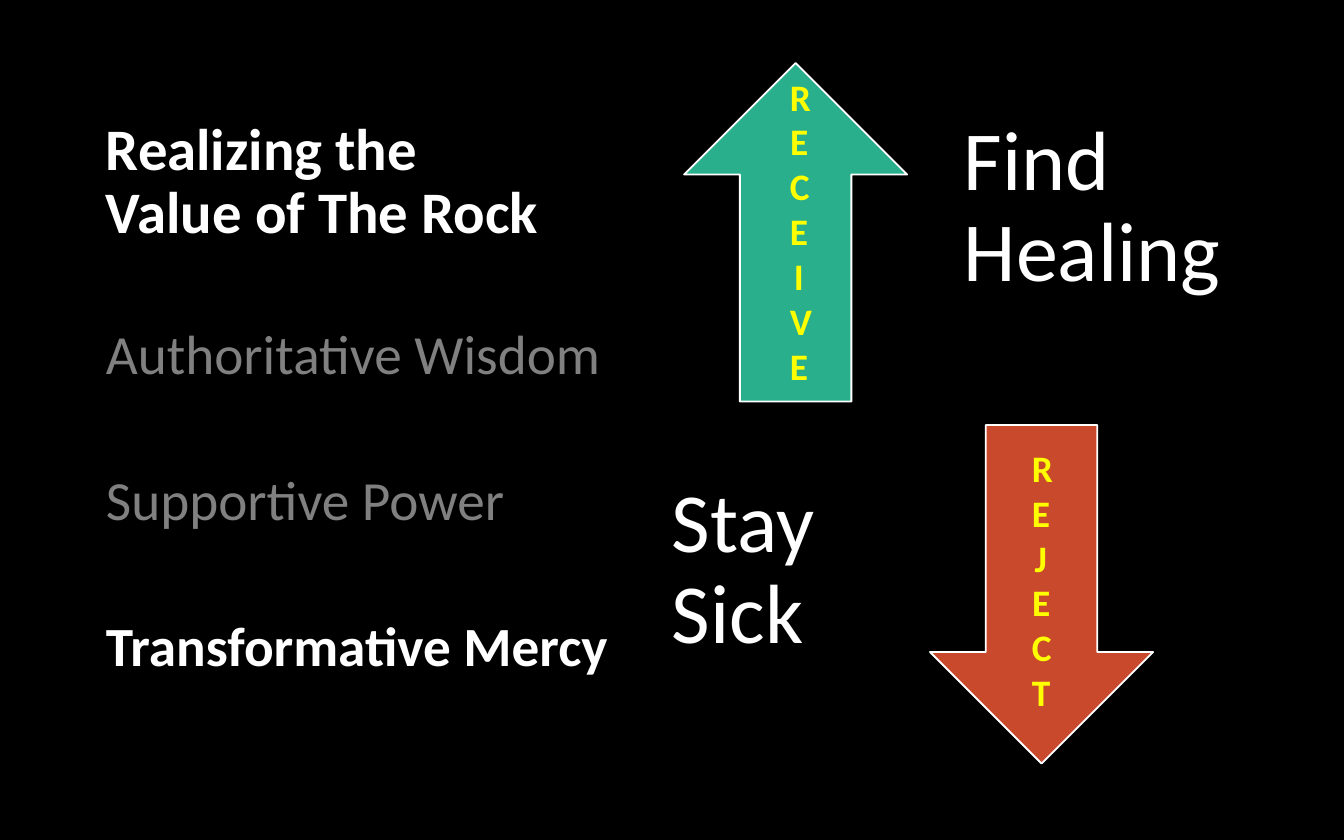
from dataclasses import dataclass

import pptx
import pptx.dml.color
import pptx.enum.shapes
import pptx.enum.text
import pptx.util

Anchor = pptx.enum.text.MSO_ANCHOR
Align = pptx.enum.text.PP_ALIGN
Kind = pptx.enum.shapes.MSO_SHAPE

WIDE, HIGH = pptx.util.Inches(10), pptx.util.Inches(6.25)
FONT = "Calibri"
HUES = {
    "back": "000000",
    "white": "FFFFFF",
    "gray": "808080",
    "green": "29AF8C",
    "red": "C9492C",
    "yellow": "FFFF00",
}


@dataclass(frozen=True)
class Box:
    left: float
    top: float
    width: float
    height: float


@dataclass(frozen=True)
class Line:
    text: str
    hue: str = "white"
    bold: bool = False


@dataclass(frozen=True)
class Block:
    box: Box
    lines: tuple[Line, ...]
    size: float
    pitch: float = 0.9
    gap: float = 0
    align: Align = Align.LEFT
    anchor: Anchor = Anchor.TOP
    pad: tuple[float, float, float, float] = (1, 0.8, 1, 0.8)


@dataclass(frozen=True)
class Arrow:
    box: Box
    kind: Kind
    hue: str


def across(share: float) -> int:
    return round(WIDE * share / 100)


def down(share: float) -> int:
    return round(HIGH * share / 100)


def place(box: Box) -> tuple[int, int, int, int]:
    return across(box.left), down(box.top), across(box.width), down(box.height)


def tint(hue: str) -> pptx.dml.color.RGBColor:
    return pptx.dml.color.RGBColor.from_string(HUES[hue])


def draw_arrow(slide, arrow: Arrow) -> None:
    shape = slide.shapes.add_shape(arrow.kind, *place(arrow.box))
    shape.shadow.inherit = False
    shape.fill.solid()
    shape.fill.fore_color.rgb = tint(arrow.hue)
    shape.line.color.rgb = tint("white")
    shape.line.width = pptx.util.Pt(1)


def draw_block(slide, block: Block) -> None:
    frame = slide.shapes.add_textbox(*place(block.box)).text_frame
    frame.word_wrap = True
    frame.vertical_anchor = block.anchor
    left, top, right, base = block.pad
    frame.margin_left, frame.margin_right = across(left), across(right)
    frame.margin_top, frame.margin_bottom = down(top), down(base)
    for rank, line in enumerate(block.lines):
        para = frame.add_paragraph() if rank else frame.paragraphs[0]
        para.alignment = block.align
        para.line_spacing = block.pitch
        para.space_before = pptx.util.Pt(block.gap if rank else 0)
        run = para.add_run()
        run.text = line.text
        run.font.name = FONT
        run.font.size = pptx.util.Pt(block.size)
        run.font.bold = line.bold
        run.font.color.rgb = tint(line.hue)


def claim(box: Box, text: str) -> Block:
    return Block(box, (Line(text),), 45, anchor=Anchor.MIDDLE, pad=(3.5, 0, 3.5, 5.6))


def stack(box: Box, *parts: str) -> Block:
    lines = tuple(Line(part, "yellow", True) for part in parts)
    return Block(box, lines, 20, pitch=1, align=Align.CENTER)


UPPER, LOWER, TALL = 7.5, 50.6, 40.3

ARROWS = (
    Arrow(Box(50.9, UPPER, 16.6, TALL), Kind.UP_ARROW, "green"),
    Arrow(Box(69.2, LOWER, 16.6, TALL), Kind.DOWN_ARROW, "red"),
)

BLOCKS = (
    claim(Box(68.2, UPPER, 26.9, TALL), "Find Healing"),
    claim(Box(46.5, LOWER, 26, TALL), "Stay Sick"),
    Block(
        Box(6.9, 38.1, 40.7, 47.5),
        (
            Line("Authoritative Wisdom", "gray"),
            Line("Supportive Power", "gray"),
            Line("Transformative Mercy", bold=True),
        ),
        29.6,
        gap=46.3,
    ),
    stack(Box(57.8, 8, 3.3, 39.4), "RECE", "IVE"),
    stack(Box(75.8, 52.2, 3.3, 33.9), "REJECT"),
    Block(
        Box(6.9, 6.7, 35, 23.4),
        (Line("Realizing the Value of The Rock", bold=True),),
        31.5,
        anchor=Anchor.BOTTOM,
    ),
)


def main() -> None:
    deck = pptx.Presentation()
    deck.slide_width, deck.slide_height = WIDE, HIGH
    slide = deck.slides.add_slide(deck.slide_layouts[6])
    slide.background.fill.solid()
    slide.background.fill.fore_color.rgb = tint("back")
    for arrow in ARROWS:
        draw_arrow(slide, arrow)
    for block in BLOCKS:
        draw_block(slide, block)
    deck.save("out.pptx")


if __name__ == "__main__":
    main()
